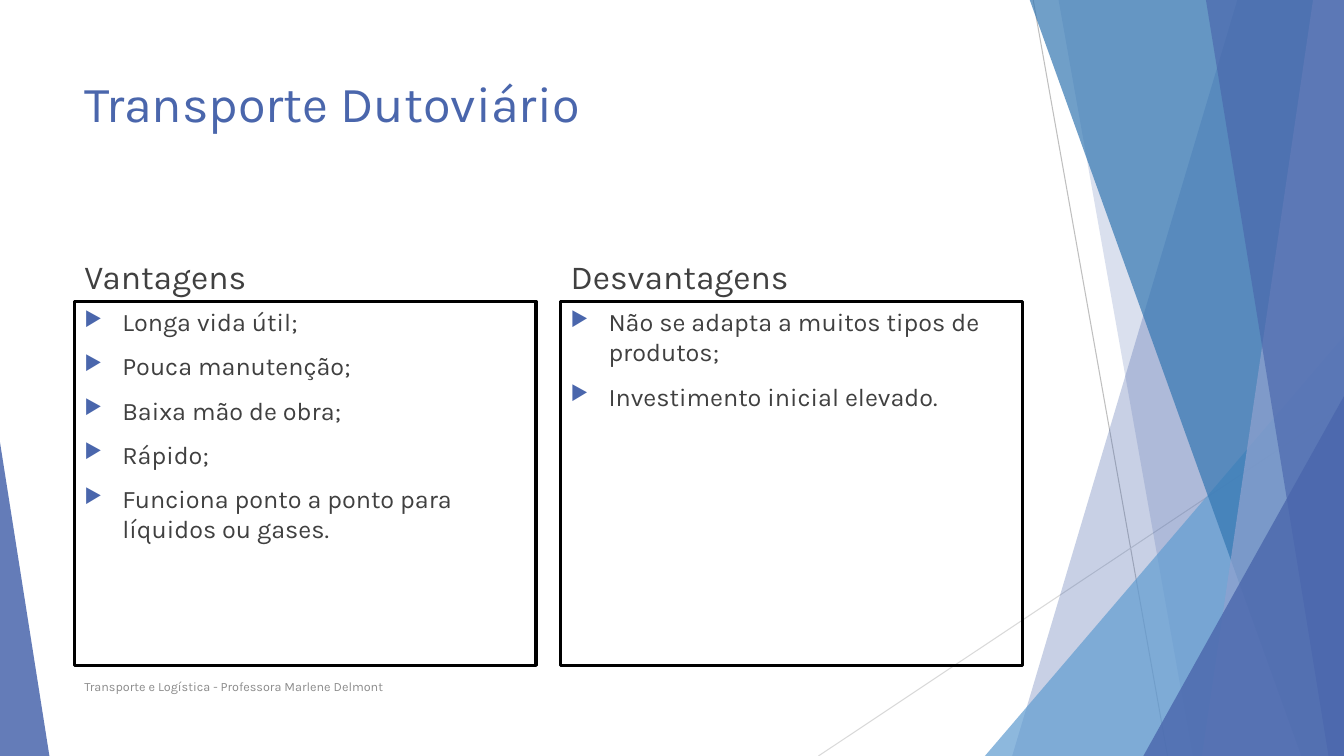
from lxml.etree import SubElement
from pptx import Presentation
from pptx.dml.color import RGBColor
from pptx.enum.shapes import MSO_CONNECTOR, MSO_SHAPE
from pptx.enum.text import MSO_ANCHOR
from pptx.oxml.ns import qn
from pptx.util import Pt

INDIGO = RGBColor(0x4A, 0x66, 0xAC)
SKY = RGBColor(0x62, 0x9D, 0xD1)
OCEAN = RGBColor(0x34, 0x77, 0xB2)
LAVENDER = RGBColor(0x90, 0xA2, 0xCF)
CHARCOAL = RGBColor(0x40, 0x40, 0x40)
GRAY = RGBColor(0x8C, 0x8C, 0x8C)
SILVER = RGBColor(0xBF, 0xBF, 0xBF)
PALE = RGBColor(0xD9, 0xD9, 0xD9)
BLACK = RGBColor(0, 0, 0)

WIDTH, HEIGHT = 960, 540
FACET_TOP = -0.67
LEFT = 53.3
COLUMN_WIDTH, COLUMN_STEP = 329.6, 347.3
HEADING_TOP, LIST_TOP, LIST_HEIGHT = 170, 215.3, 260

TITLE = {"size": Pt(36), "color": INDIGO}
HEADING = {"size": Pt(24), "color": CHARCOAL}
BODY = {"size": Pt(18), "color": CHARCOAL}
FOOTER = {"size": Pt(9), "color": GRAY}

COLUMNS = [
    ("Vantagens", [
        "Longa vida útil;",
        "Pouca manutenção;",
        "Baixa mão de obra;",
        "Rápido;",
        "Funciona ponto a ponto para líquidos ou gases.",
    ]),
    ("Desvantagens", [
        "Não se adapta a muitos tipos de produtos;",
        "Investimento inicial elevado.",
    ]),
]


class SlidePainter:
    font_name = "Karla"

    def __init__(self, page):
        self.page = page

    def line(self, start, end, color):
        points = [Pt(value) for value in (*start, *end)]
        connector = self.page.shapes.add_connector(MSO_CONNECTOR.STRAIGHT, *points)
        connector.line.color.rgb = color
        connector.line.width = Pt(0.75)
        SubElement(connector._element.spPr, qn("a:effectLst"))

    def paint(self, shape, color, opacity):
        shape.shadow.inherit = False
        shape.fill.solid()
        shape.fill.fore_color.rgb = color
        shape.line.fill.background()
        color_element = shape._element.spPr.find(qn("a:solidFill"))[0]
        SubElement(color_element, qn("a:alpha"), val=str(opacity * 1000))

    def facet(self, top_left, bottom_left, color, opacity):
        builder = self.page.shapes.build_freeform(Pt(top_left), Pt(FACET_TOP))
        corners = [(WIDTH, FACET_TOP), (WIDTH, HEIGHT), (bottom_left, HEIGHT)]
        builder.add_line_segments([(Pt(x), Pt(y)) for x, y in corners])
        self.paint(builder.convert_to_shape(), color, opacity)

    def triangle(self, left, top, width, apex, color, opacity):
        shape = self.page.shapes.add_shape(
            MSO_SHAPE.ISOSCELES_TRIANGLE, Pt(left), Pt(top), Pt(width), Pt(HEIGHT - top))
        shape.adjustments[0] = apex
        self.paint(shape, color, opacity)

    def text(self, place, lines, style, anchor=MSO_ANCHOR.TOP, space=0, bullets=False):
        box = self.page.shapes.add_textbox(*[Pt(value) for value in place])
        frame = box.text_frame
        frame.word_wrap = True
        frame.vertical_anchor = anchor
        for index, line in enumerate(lines):
            para = frame.add_paragraph() if index else frame.paragraphs[0]
            para.space_before = Pt(space)
            if bullets:
                self.bullet(para)
            span = para.add_run()
            span.text = line
            span.font.name = self.font_name
            for name, value in style.items():
                if name == "color":
                    span.font.color.rgb = value
                else:
                    setattr(span.font, name, value)
        return box

    def bullet(self, para):
        properties = para._p.get_or_add_pPr()
        for name, value in {"marL": Pt(27), "indent": -Pt(27)}.items():
            properties.set(name, str(int(value)))
        color = SubElement(properties, qn("a:buClr"))
        SubElement(color, qn("a:srgbClr"), val=str(INDIGO))
        SubElement(properties, qn("a:buSzPct"), val="80000")
        SubElement(properties, qn("a:buChar"), char="▶")

    def bullet_box(self, place, lines):
        box = self.text(place, lines, BODY, space=10, bullets=True)
        box.line.color.rgb = BLACK
        box.line.width = Pt(2.25)


def main():
    deck = Presentation()
    deck.slide_width, deck.slide_height = Pt(WIDTH), Pt(HEIGHT)
    page = deck.slides.add_slide(deck.slide_layouts[6])
    painter = SlidePainter(page)

    painter.line((738, 0), (834, HEIGHT), SILVER)
    painter.line((WIDTH, 290), (584.6, HEIGHT), PALE)
    painter.facet(884, 723, INDIGO, 30)
    painter.facet(756, 852, INDIGO, 20)
    painter.triangle(703.5, 240, 256.5, 1, SKY, 72)
    painter.facet(735.3, 929.5, OCEAN, 70)
    painter.facet(938, 858.5, LAVENDER, 70)
    painter.facet(861.3, 949, INDIGO, 65)
    painter.triangle(816.7, 283, 143.3, 1, INDIGO, 80)
    painter.triangle(0, 316, 35.3, 0, INDIGO, 85)

    painter.text((LEFT, 48, 677, 104), ["Transporte Dutoviário"], TITLE)
    for index, (heading, items) in enumerate(COLUMNS):
        left = LEFT + index * COLUMN_STEP
        painter.text((left, HEADING_TOP, COLUMN_WIDTH, LIST_TOP - HEADING_TOP),
                     [heading], HEADING, MSO_ANCHOR.BOTTOM, space=10)
        painter.bullet_box((left, LIST_TOP, COLUMN_WIDTH, LIST_HEIGHT), items)
    painter.text((LEFT, 476, 496, 28.8),
                 ["Transporte e Logística - Professora Marlene Delmont"],
                 FOOTER, MSO_ANCHOR.MIDDLE)
    deck.save("out.pptx")


if __name__ == "__main__":
    main()
